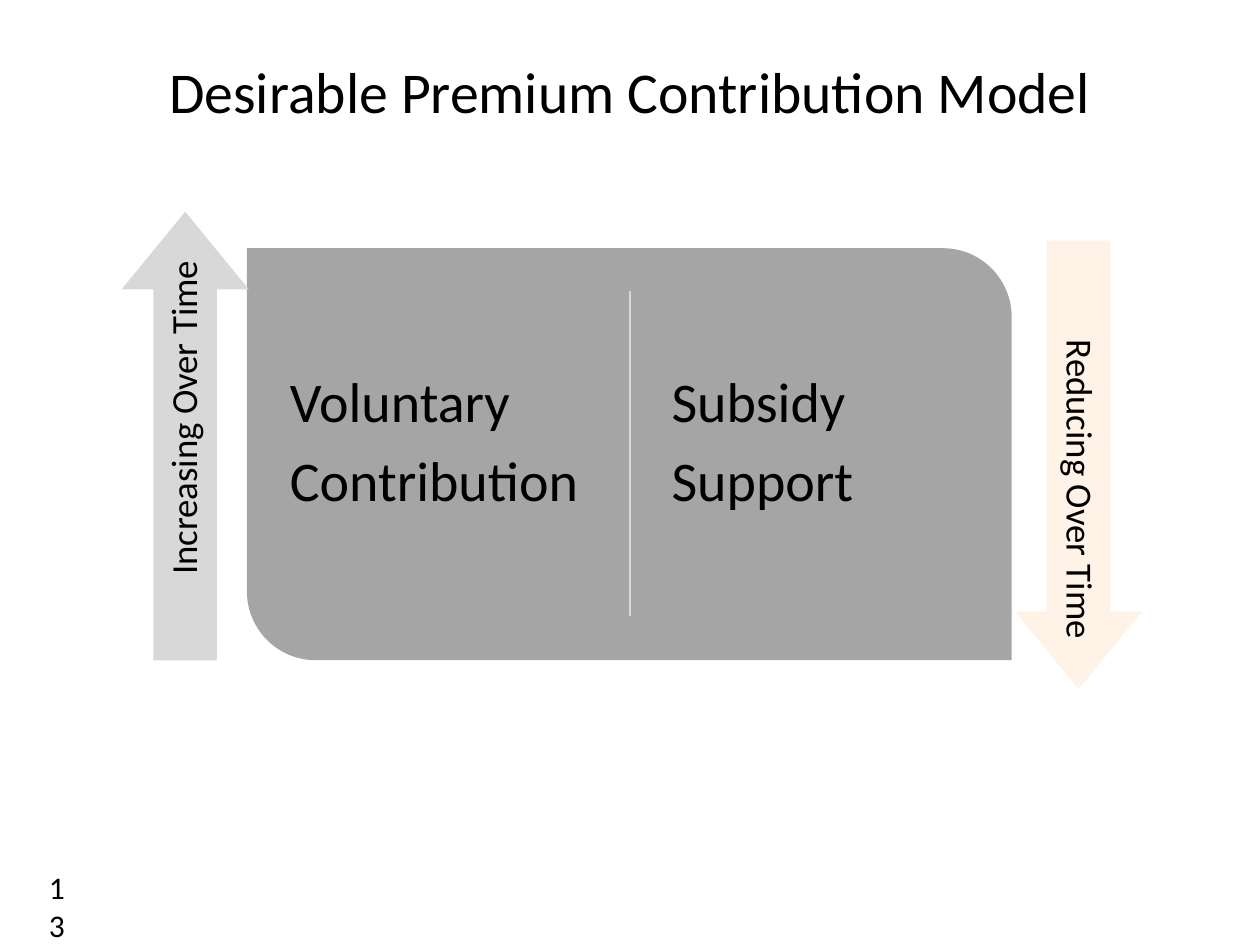
from dataclasses import dataclass

from lxml import etree
from pptx import Presentation
from pptx.dml.color import RGBColor
from pptx.enum.shapes import MSO_CONNECTOR, MSO_SHAPE
from pptx.enum.text import MSO_ANCHOR, PP_ALIGN
from pptx.oxml.ns import qn
from pptx.util import Inches, Pt

BLACK = RGBColor(0x00, 0x00, 0x00)
GREY = RGBColor(0xA5, 0xA5, 0xA5)
LIGHT_GREY = RGBColor(0xD8, 0xD8, 0xD8)
PEACH = RGBColor(0xFF, 0xF2, 0xE7)
FONT = "Calibri"

LEFT, CENTER, RIGHT = PP_ALIGN.LEFT, PP_ALIGN.CENTER, PP_ALIGN.RIGHT
TOP, MIDDLE = MSO_ANCHOR.TOP, MSO_ANCHOR.MIDDLE

ARROW_LENGTH, ARROW_BREADTH = 3.56, 1.01
LABEL_LENGTH, LABEL_BREADTH = 3.26, 0.5


@dataclass(frozen=True)
class TrendArrow:
    text: str
    center_x: float
    arrow_center_y: float
    label_center_y: float
    rotation: int
    color: RGBColor


@dataclass(frozen=True)
class Share:
    lines: tuple[str, ...]
    left: float


ARROWS = (
    TrendArrow("Increasing Over Time", 1.47, 3.46, 3.61, 270, LIGHT_GREY),
    TrendArrow("Reducing Over Time", 8.56, 3.69, 3.53, 90, PEACH),
)
SHARES = (
    Share(("Voluntary", "Contribution"), 2.17),
    Share(("Subsidy", "Support"), 5.2),
)


def add_text(slide, lines: tuple[str, ...], left: float, top: float,
             width: float, height: float, *, size: float,
             align=LEFT, anchor=TOP, line_spacing: float = 1.0,
             space_after: float = 0, rotation: int = 0,
             margins: tuple[float, ...] = (0.1, 0.05, 0.1, 0.05)):
    """Add a wrapped text box; margins run left, top, right, bottom."""
    box = slide.shapes.add_textbox(
        Inches(left), Inches(top), Inches(width), Inches(height))
    box.rotation = rotation
    frame = box.text_frame
    frame.word_wrap = True
    frame.vertical_anchor = anchor
    (frame.margin_left, frame.margin_top,
     frame.margin_right, frame.margin_bottom) = map(Inches, margins)
    frame.text = "\n".join(lines)
    for paragraph in frame.paragraphs:
        paragraph.alignment = align
        paragraph.line_spacing = line_spacing
        paragraph.space_after = Pt(space_after)
        for run in paragraph.runs:
            run.font.name = FONT
            run.font.size = Pt(size)
            run.font.color.rgb = BLACK


def add_filled_shape(slide, kind, left: float, top: float, width: float,
                     height: float, color: RGBColor,
                     adjustments: tuple[float, float]):
    shape = slide.shapes.add_shape(
        kind, Inches(left), Inches(top), Inches(width), Inches(height))
    shape.shadow.inherit = False
    shape.fill.solid()
    shape.fill.fore_color.rgb = color
    shape.line.fill.background()
    for index, value in enumerate(adjustments):
        shape.adjustments[index] = value
    return shape


def add_divider(slide, x: float, top: float, bottom: float) -> None:
    divider = slide.shapes.add_connector(
        MSO_CONNECTOR.STRAIGHT,
        Inches(x), Inches(top), Inches(x), Inches(bottom))
    divider.line.color.rgb = LIGHT_GREY
    divider.line.width = Pt(1)
    etree.SubElement(divider._element.spPr, qn("a:effectLst"))


def add_trend_arrow(slide, arrow: TrendArrow) -> None:
    shape = add_filled_shape(
        slide, MSO_SHAPE.RIGHT_ARROW,
        arrow.center_x - ARROW_LENGTH / 2,
        arrow.arrow_center_y - ARROW_BREADTH / 2,
        ARROW_LENGTH, ARROW_BREADTH, arrow.color, (0.5, 0.61))
    shape.rotation = arrow.rotation
    add_text(slide, (arrow.text,),
             arrow.center_x - LABEL_LENGTH / 2,
             arrow.label_center_y - LABEL_BREADTH / 2,
             LABEL_LENGTH, LABEL_BREADTH, size=21, align=RIGHT,
             anchor=MIDDLE, line_spacing=0.9, rotation=arrow.rotation,
             margins=(0.09,) * 4)


def main() -> None:
    presentation = Presentation()
    presentation.slide_width = Inches(10)
    presentation.slide_height = Inches(7.5)
    slide = presentation.slides.add_slide(presentation.slide_layouts[6])

    # Slide number and title
    add_text(slide, ("13",), 0.29, 6.84, 0.42, 0.66, size=18)
    add_text(slide, ("Desirable Premium Contribution Model",),
             0.5, 0.3, 9, 0.9, size=33, align=CENTER, anchor=MIDDLE,
             line_spacing=0.9)

    # Panel with the two contribution shares
    add_filled_shape(slide, MSO_SHAPE.ROUND_2_DIAG_RECTANGLE,
                     1.96, 1.97, 6.07, 3.27, GREY, (0, 0.167))
    add_divider(slide, 5, 2.31, 4.89)
    for share in SHARES:
        add_text(slide, share.lines, share.left, 2.21, 2.63, 2.77, size=32,
                 line_spacing=0.9, space_after=10.6,
                 margins=(0.13, 0.76, 0.13, 0.13))

    # Trend arrows at the sides
    for arrow in ARROWS:
        add_trend_arrow(slide, arrow)

    presentation.save("out.pptx")


if __name__ == "__main__":
    main()
